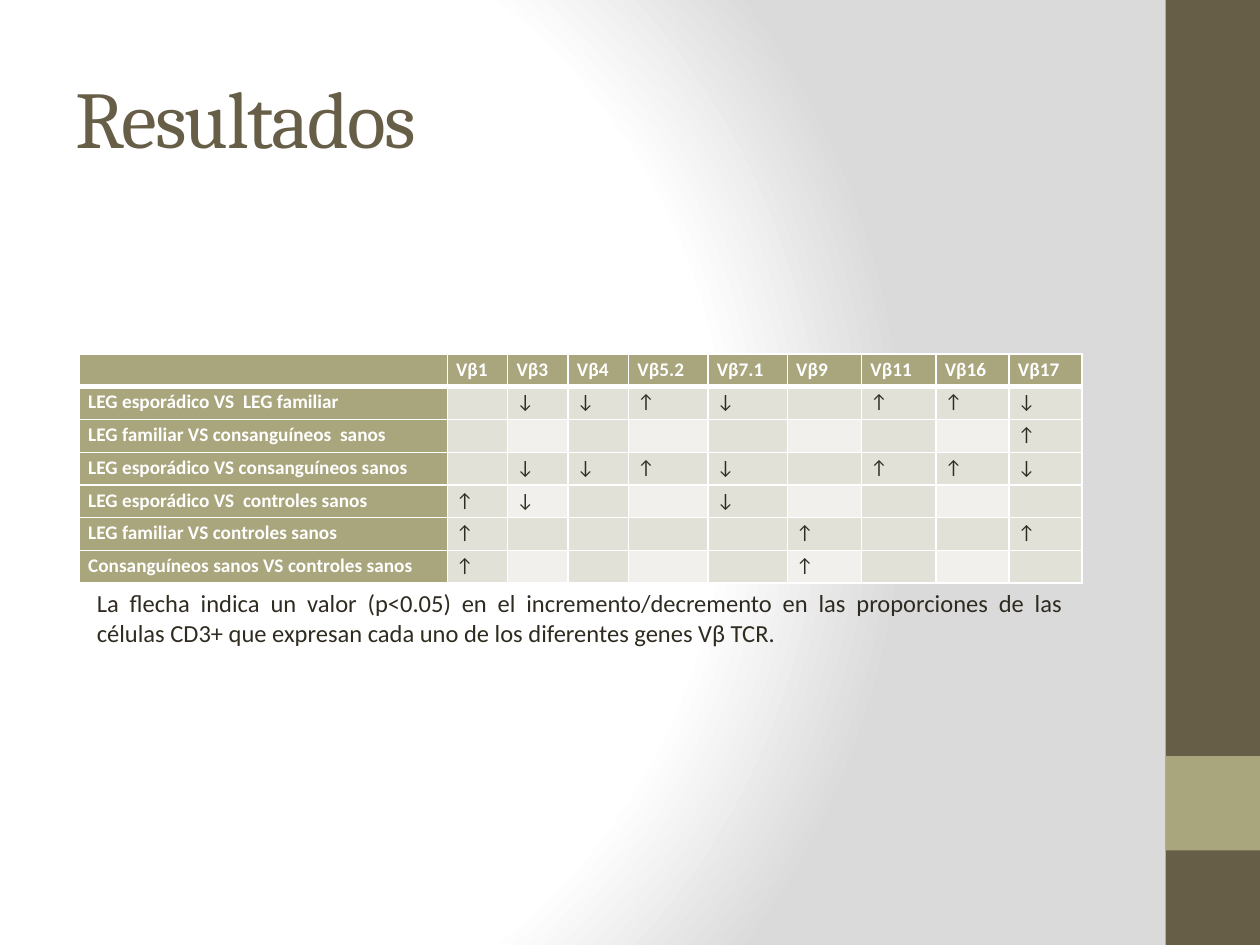
from dataclasses import dataclass

from lxml import etree
from pptx import Presentation
from pptx.dml.color import RGBColor
from pptx.enum.shapes import MSO_SHAPE
from pptx.enum.text import MSO_ANCHOR, PP_ALIGN
from pptx.oxml import parse_xml
from pptx.oxml.ns import nsdecls, qn
from pptx.util import Inches, Pt

RECTANGLE = MSO_SHAPE.RECTANGLE
MIDDLE, TOP = MSO_ANCHOR.MIDDLE, MSO_ANCHOR.TOP
LEFT, JUSTIFY = PP_ALIGN.LEFT, PP_ALIGN.JUSTIFY


@dataclass(frozen=True)
class Theme:
    brown: str = "675E47"
    olive: str = "A9A57C"
    ink: str = "2F2B20"
    white: str = "FFFFFF"
    grey: str = "DADADA"
    band_dark: str = "E2E1D7"
    band_light: str = "F1F0EC"
    heading_font: str = "Cambria"
    body_font: str = "Calibri"
    title_size: int = 46
    note_size: int = 14
    table_size: int = 11


def apply(target, values):
    for name, value in values.items():
        setattr(target, name, value)


class SlideBuilder:
    def __init__(self, slide, theme):
        self.slide = slide
        self.theme = theme

    def background(self):
        stops = ((0, self.theme.white), (75, self.theme.white), (100, self.theme.grey))
        stop_xml = "".join(
            f'<a:gs pos="{position * 1000}"><a:srgbClr val="{color}"/></a:gs>'
            for position, color in stops
        )
        self.slide.element.cSld.insert(0, parse_xml(
            f'<p:bg {nsdecls("p", "a")}><p:bgPr><a:gradFill rotWithShape="1">'
            f'<a:gsLst>{stop_xml}</a:gsLst><a:path path="circle">'
            '<a:fillToRect l="20000" t="50000" r="100000" b="50000"/></a:path>'
            '</a:gradFill><a:effectLst/></p:bgPr></p:bg>'
        ))

    def block(self, left, top, width, height, color):
        block = self.slide.shapes.add_shape(
            RECTANGLE, Inches(left), Inches(top), Inches(width), Inches(height))
        block.shadow.inherit = False
        block.fill.solid()
        block.fill.fore_color.rgb = RGBColor.from_string(color)
        block.line.fill.background()

    def styled_run(self, paragraph, text, color, font, size, bold=False):
        run = paragraph.add_run()
        run.text = text
        apply(run.font, {"name": font, "size": Pt(size), "bold": bold})
        run.font.color.rgb = RGBColor.from_string(color)
        return run

    def text(self, left, top, width, height, text, color, font, size,
             align=LEFT, anchor=TOP, spacing=0):
        box = self.slide.shapes.add_textbox(
            Inches(left), Inches(top), Inches(width), Inches(height))
        apply(box.text_frame, {"word_wrap": True, "vertical_anchor": anchor})
        paragraph = box.text_frame.paragraphs[0]
        paragraph.alignment = align
        run = self.styled_run(paragraph, text, color, font, size)
        if spacing:
            run._r.get_or_add_rPr().set("spc", str(spacing * 100))

    def borders(self, cell, widths):
        properties = cell._tc.get_or_add_tcPr()
        for side, width in widths.items():
            line = etree.SubElement(properties, qn(f"a:ln{side}"), w=str(Pt(width)))
            fill = etree.SubElement(line, qn("a:solidFill"))
            etree.SubElement(fill, qn("a:srgbClr"), val=self.theme.white)

    def cell(self, cell, text, fill, color, bold, widths):
        theme = self.theme
        self.borders(cell, widths)
        cell.fill.solid()
        cell.fill.fore_color.rgb = RGBColor.from_string(fill)
        apply(cell, {"margin_left": Inches(0.07), "margin_right": Inches(0.07),
                     "margin_top": 0, "margin_bottom": 0})
        paragraph = cell.text_frame.paragraphs[0]
        apply(paragraph, {"alignment": JUSTIFY, "line_spacing": 1.15})
        if text:
            self.styled_run(paragraph, text, color, theme.body_font,
                            theme.table_size, bold)
        else:
            etree.SubElement(paragraph._p, qn("a:endParaRPr"),
                             sz=str(theme.table_size * 100))

    def table(self, left, top, column_widths, row_height, rows):
        theme = self.theme
        table = self.slide.shapes.add_table(
            len(rows), len(column_widths), Inches(left), Inches(top),
            Inches(sum(column_widths)), Inches(row_height * len(rows))).table
        for column, width in zip(table.columns, column_widths):
            column.width = Inches(width)
        for r, values in enumerate(rows):
            table.rows[r].height = Inches(row_height)
            widths = {"L": 1, "R": 1, "T": 3 if r == 1 else 1, "B": 3 if r == 0 else 1}
            for c, value in enumerate(values):
                heading = r == 0 or c == 0
                band = theme.band_dark if r % 2 or c % 2 else theme.band_light
                self.cell(table.cell(r, c), value,
                          theme.olive if heading else band,
                          theme.white if heading else theme.ink, heading, widths)


GENES = ["Vβ1", "Vβ3", "Vβ4", "Vβ5.2", "Vβ7.1", "Vβ9", "Vβ11", "Vβ16", "Vβ17"]
COMPARISONS = [
    ("LEG esporádico VS  LEG familiar", "-↓↓↑↓-↑↑↓"),
    ("LEG familiar VS consanguíneos  sanos", "--------↑"),
    ("LEG esporádico VS consanguíneos sanos", "-↓↓↑↓-↑↑↓"),
    ("LEG esporádico VS  controles sanos", "↑↓--↓----"),
    ("LEG familiar VS controles sanos", "↑----↑--↑"),
    ("Consanguíneos sanos VS controles sanos", "↑----↑---"),
]
COLUMN_WIDTHS = [2.92] + [0.48] * 3 + [0.63] * 2 + [0.59] * 2 + [0.58] * 2
NOTE = ("La flecha indica un valor (p<0.05) en el incremento/decremento en las "
        "proporciones de las células CD3+ que expresan cada uno de los diferentes "
        "genes Vβ TCR.")


def main():
    deck = Presentation()
    apply(deck, {"slide_width": Inches(10), "slide_height": Inches(7.5)})
    theme = Theme()
    builder = SlideBuilder(deck.slides.add_slide(deck.slide_layouts[6]), theme)

    builder.background()
    builder.block(9.25, 0, 0.75, 7.5, theme.brown)
    builder.block(9.25, 6, 0.75, 0.75, theme.olive)
    builder.text(0.5, 0.3, 8.33, 1.25, "Resultados", theme.brown,
                 theme.heading_font, theme.title_size, anchor=MIDDLE, spacing=-1)

    rows = [[""] + GENES]
    for label, arrows in COMPARISONS:
        rows.append([label] + [arrow.strip("-") for arrow in arrows])
    builder.table(0.63, 2.81, COLUMN_WIDTHS, 0.26, rows)
    builder.text(0.67, 4.62, 7.87, 0.57, NOTE, theme.ink,
                 theme.body_font, theme.note_size, align=JUSTIFY)

    deck.save("out.pptx")


if __name__ == "__main__":
    main()
